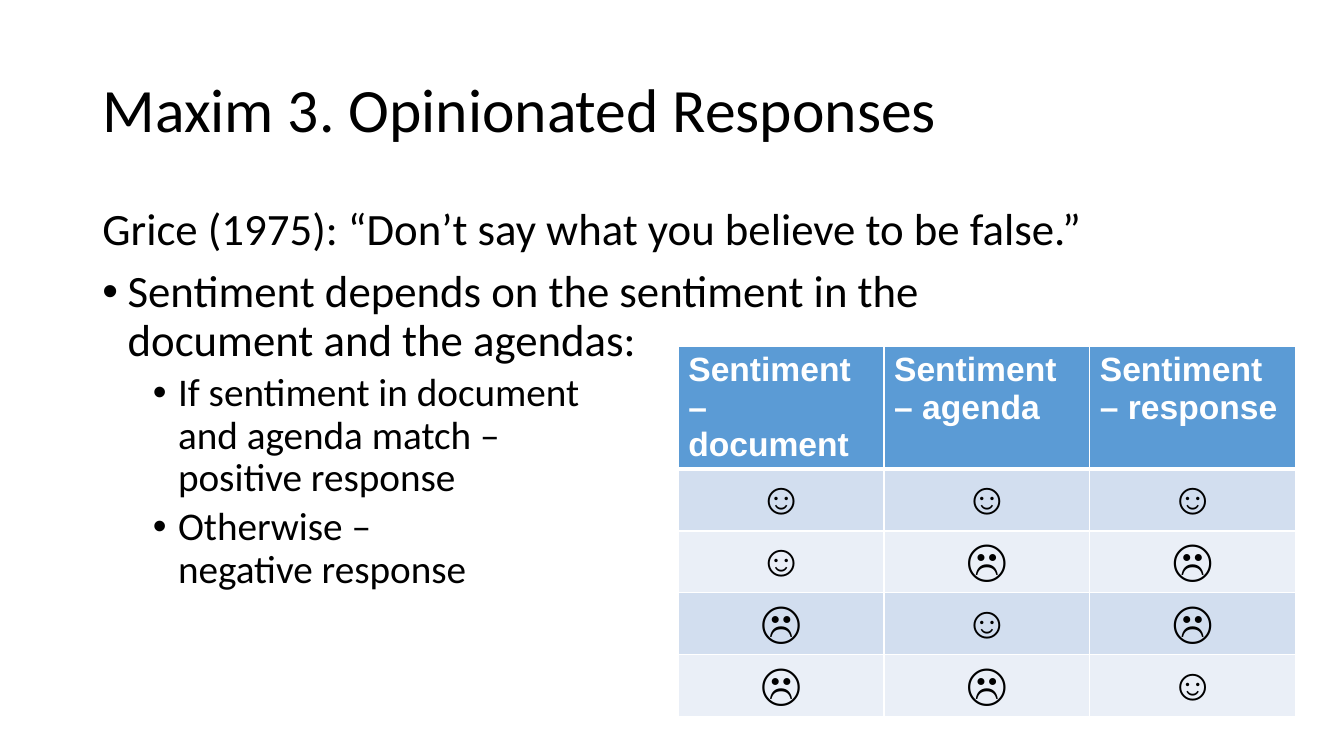
import pptx
import pptx.dml.color
import pptx.enum.text
import pptx.oxml
import pptx.oxml.ns
import pptx.util

EMU_PER_PX = 9525
BLACK = pptx.dml.color.RGBColor(0x00, 0x00, 0x00)
WHITE = pptx.dml.color.RGBColor(0xFF, 0xFF, 0xFF)
HEADER_BLUE = pptx.dml.color.RGBColor(0x5B, 0x9B, 0xD5)
BAND_DARK = pptx.dml.color.RGBColor(0xD2, 0xDE, 0xEF)
BAND_LIGHT = pptx.dml.color.RGBColor(0xEA, 0xEF, 0xF7)

LEFT = pptx.enum.text.PP_ALIGN.LEFT
CENTER = pptx.enum.text.PP_ALIGN.CENTER

HAPPY, SAD = "☺", "☹"
HEADINGS = ["Sentiment – document", "Sentiment – agenda", "Sentiment – response"]
POINTS = [
    ("Grice (1975): “Don’t say what you believe to be false.”",
     dict(size=32, before=10)),
    ("Sentiment depends on the sentiment in the document and the agendas:",
     dict(size=32, before=10, bullet=True, indent=24)),
    ("If sentiment in document \vand agenda match – \vpositive response",
     dict(size=28, before=5, bullet=True, indent=72, level=1)),
    ("Otherwise –\vnegative response",
     dict(size=28, before=5, bullet=True, indent=72, level=1)),
]


def px(length):
    return pptx.util.Emu(length * EMU_PER_PX)


def write(paragraph, text, size, font="Calibri", color=BLACK, bold=False,
          align=LEFT, spacing=None, before=0, level=0):
    paragraph.text = text
    paragraph.alignment = align
    paragraph.level = level
    paragraph.line_spacing = spacing
    paragraph.space_before = pptx.util.Pt(before)
    for run in paragraph.runs:
        run.font.size = pptx.util.Pt(size)
        run.font.name = font
        run.font.bold = bold
        run.font.color.rgb = color


def set_bullet(paragraph, bullet, indent):
    properties = paragraph._p.get_or_add_pPr()
    properties.set("marL", str(px(indent)))
    properties.set("indent", str(px(-24 if bullet else 0)))
    namespace = pptx.oxml.ns.nsdecls("a")
    marks = ['<a:buFont %s typeface="Arial"/>', '<a:buChar %s char="•"/>'] if bullet else ["<a:buNone %s/>"]
    for mark in marks:
        properties.append(pptx.oxml.parse_xml(mark % namespace))


def place(placeholder, left, top, width, height, anchor):
    placeholder.left, placeholder.top = px(left), px(top)
    placeholder.width, placeholder.height = px(width), px(height)
    frame = placeholder.text_frame
    frame.word_wrap = True
    frame.auto_size = pptx.enum.text.MSO_AUTO_SIZE.NONE
    frame.vertical_anchor = anchor
    return frame


def add_points(frame):
    for index, (text, style) in enumerate(POINTS):
        paragraph = frame.add_paragraph() if index else frame.paragraphs[0]
        form = dict(style)
        bullet, indent = form.pop("bullet", False), form.pop("indent", 0)
        write(paragraph, text, spacing=0.9, **form)
        set_bullet(paragraph, bullet, indent)


def set_borders(cell, top=1, bottom=1):
    properties = cell._tc.get_or_add_tcPr()
    sides = [("lnL", 1), ("lnR", 1), ("lnT", top), ("lnB", bottom)]
    for index, (side, points) in enumerate(sides):
        properties.insert(index, pptx.oxml.parse_xml(
            f'<a:{side} {pptx.oxml.ns.nsdecls("a")} w="{pptx.util.Pt(points)}">'
            f'<a:solidFill><a:srgbClr val="{WHITE}"/></a:solidFill></a:{side}>'))


def fill_cell(cell, text, fill, top=1, bottom=1, **style):
    write(cell.text_frame.paragraphs[0], text, font="Arial", **style)
    cell.fill.solid()
    cell.fill.fore_color.rgb = fill
    set_borders(cell, top, bottom)


def add_sentiment_table(slide):
    moods = [(document, agenda, HAPPY if document == agenda else SAD)
             for document in (HAPPY, SAD) for agenda in (HAPPY, SAD)]
    sentiments = slide.shapes.add_table(
        len(moods) + 1, len(HEADINGS), px(646), px(330), px(588), px(320)).table
    for column in sentiments.columns:
        column.width = px(196)
    for index, row in enumerate(sentiments.rows):
        row.height = px(59 if index else 84)
    for column, heading in enumerate(HEADINGS):
        fill_cell(sentiments.cell(0, column), heading, HEADER_BLUE, bottom=3,
                  size=24, color=WHITE, bold=True)
    for row, faces in enumerate(moods, start=1):
        for column, face in enumerate(faces):
            fill_cell(sentiments.cell(row, column), face,
                      BAND_DARK if row % 2 else BAND_LIGHT,
                      top=3 if row == 1 else 1, size=32, align=CENTER)


def main():
    presentation = pptx.Presentation()
    presentation.slide_width, presentation.slide_height = px(1280), px(720)
    slide = presentation.slides.add_slide(presentation.slide_layouts[1])
    title = place(slide.shapes.title, 88, 38, 1104, 139,
                  pptx.enum.text.MSO_ANCHOR.MIDDLE)
    write(title.paragraphs[0], "Maxim 3. Opinionated Responses", size=44, spacing=0.9)
    add_points(place(slide.placeholders[1], 88, 192, 976, 457,
                     pptx.enum.text.MSO_ANCHOR.TOP))
    add_sentiment_table(slide)
    presentation.save("out.pptx")


if __name__ == "__main__":
    main()
